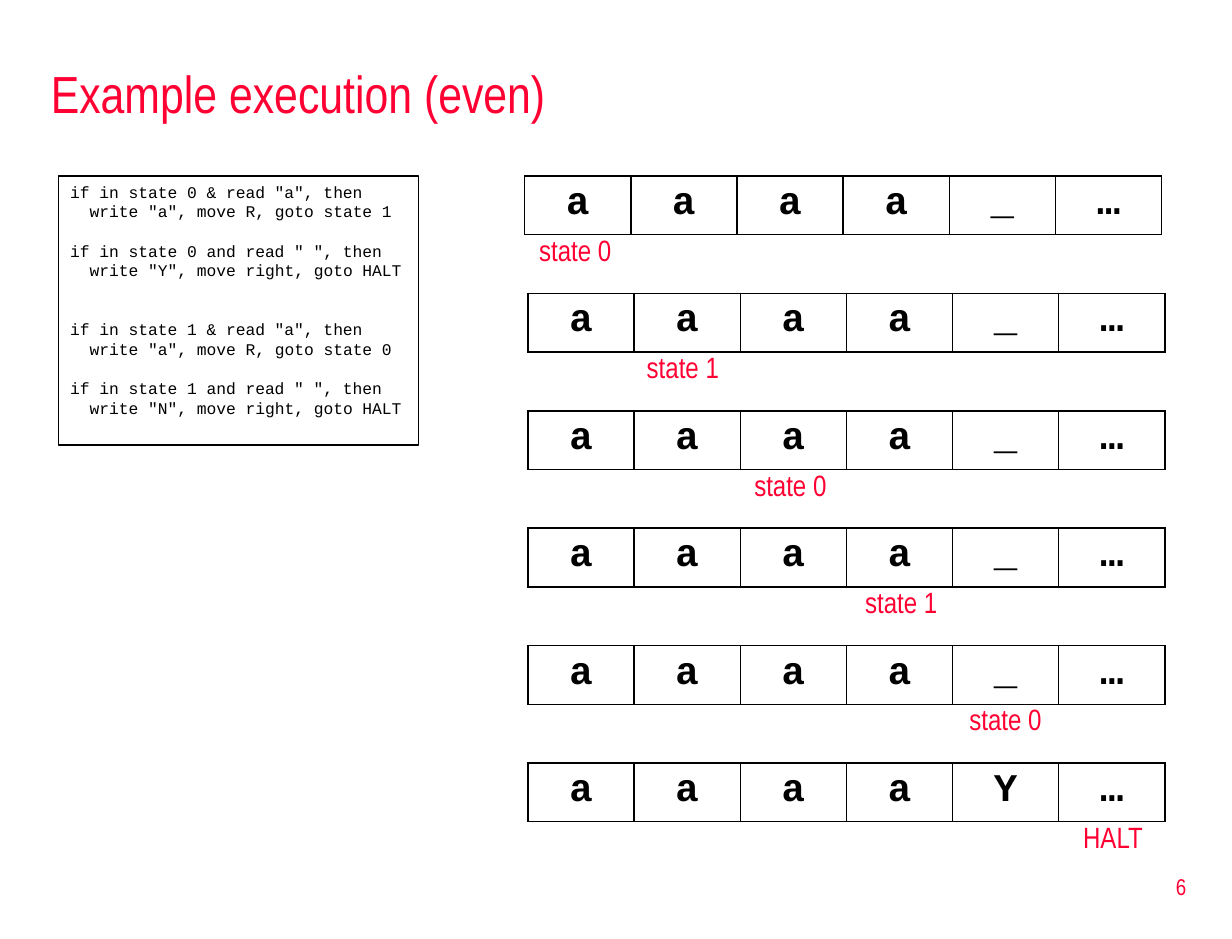
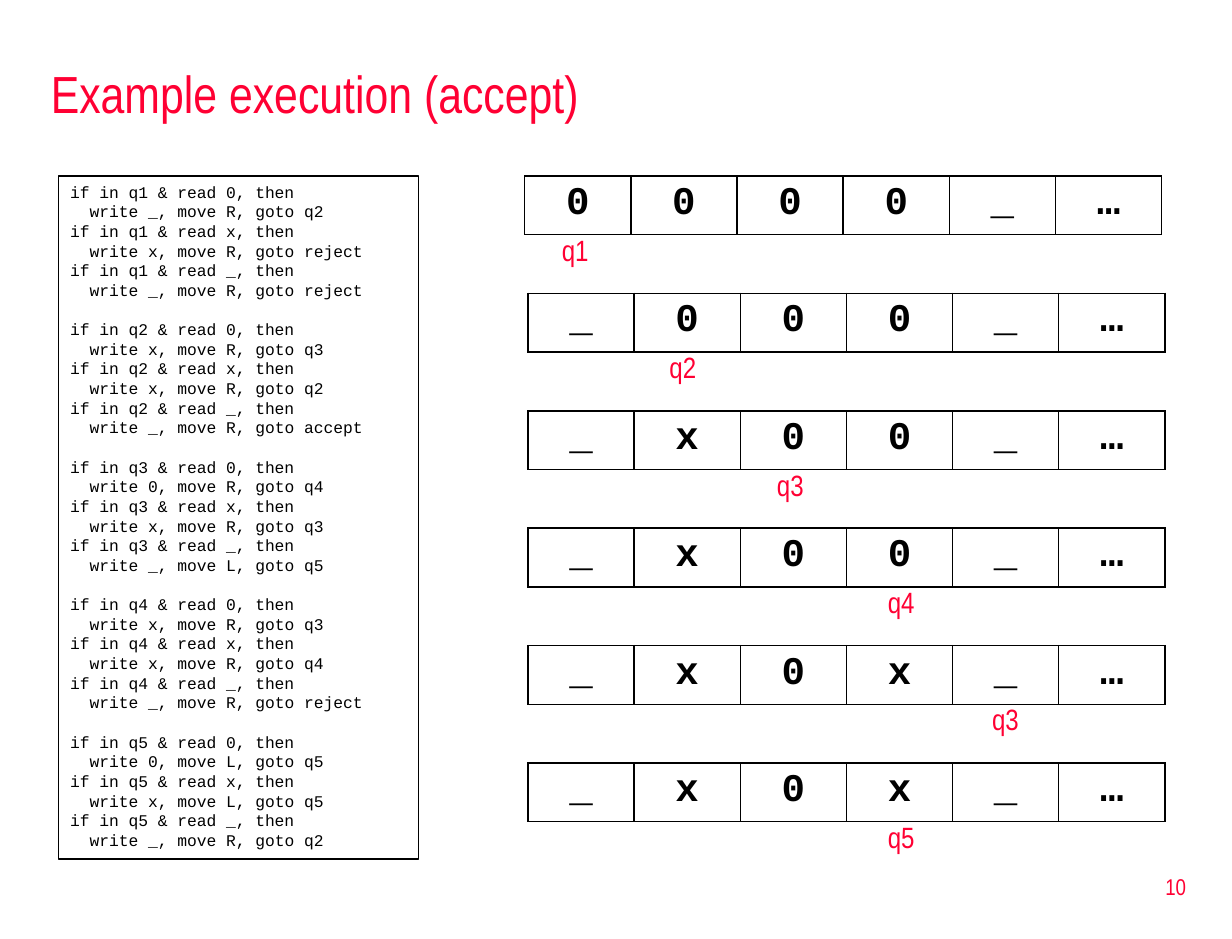
from pptx import Presentation
from pptx.dml.color import RGBColor
from pptx.enum.shapes import MSO_SHAPE
from pptx.enum.text import MSO_ANCHOR, PP_ALIGN
from pptx.oxml.ns import qn
from pptx.util import Pt
from lxml.etree import SubElement

EXECUTIONS = [
    {
        "title": "Example execution (even)",
        "number": "6",
        "program_height": 165,
        "program": [
            (0, ['if in state 0 & read "a", then', 'write "a", move R, goto state 1']),
            (1, ['if in state 0 and read " ", then', 'write "Y", move right, goto HALT']),
            (2, ['if in state 1 & read "a", then', 'write "a", move R, goto state 0']),
            (1, ['if in state 1 and read " ", then', 'write "N", move right, goto HALT']),
        ],
        "steps": [
            ("aaaa_…", 0, "state 0"),
            ("aaaa_…", 1, "state 1"),
            ("aaaa_…", 2, "state 0"),
            ("aaaa_…", 3, "state 1"),
            ("aaaa_…", 4, "state 0"),
            ("aaaaY…", 5, "HALT"),
        ],
    },
    {
        "title": "Example execution (accept)",
        "number": "10",
        "program_height": 419,
        "program": [
            (0, ["if in q1 & read 0, then", "write _, move R, goto q2",
                 "if in q1 & read x, then", "write x, move R, goto reject",
                 "if in q1 & read _, then", "write _, move R, goto reject"]),
            (1, ["if in q2 & read 0, then", "write x, move R, goto q3",
                 "if in q2 & read x, then", "write x, move R, goto q2",
                 "if in q2 & read _, then", "write _, move R, goto accept"]),
            (1, ["if in q3 & read 0, then", "write 0, move R, goto q4",
                 "if in q3 & read x, then", "write x, move R, goto q3",
                 "if in q3 & read _, then", "write _, move L, goto q5"]),
            (1, ["if in q4 & read 0, then", "write x, move R, goto q3",
                 "if in q4 & read x, then", "write x, move R, goto q4",
                 "if in q4 & read _, then", "write _, move R, goto reject"]),
            (1, ["if in q5 & read 0, then", "write 0, move L, goto q5",
                 "if in q5 & read x, then", "write x, move L, goto q5",
                 "if in q5 & read _, then", "write _, move R, goto q2"]),
        ],
        "steps": [
            ("0000_…", 0, "q1"),
            ("_000_…", 1, "q2"),
            ("_x00_…", 2, "q3"),
            ("_x00_…", 3, "q4"),
            ("_x0x_…", 4, "q3"),
            ("_x0x_…", 3, "q5"),
        ],
    },
]

RED, BLACK = "FF0033", "000000"
SANS, MONO = "Arial Narrow", "Courier New"
LINE_PITCH = 12.05
ACTION_INDENT = 12
FIRST_TAPE_LEFT, TAPE_LEFT, TAPE_TOP = 322, 324, 108
STEP_PITCH = 72
CELL_WIDTH, CELL_HEIGHT = 65.16, 30.24
HEAD_LEFTS = (322, 388, 454, 522, 586, 652)
HEAD_TOP = 138.75


def colour(code):
    return RGBColor.from_string(code)


def write(paragraph, text, font, size, code, align=PP_ALIGN.LEFT, bold=False):
    paragraph.alignment = align
    run = paragraph.add_run()
    run.text = text
    run.font.name = font
    run.font.size = Pt(size)
    run.font.bold = bold
    run.font.color.rgb = colour(code)


def add_label(slide, box, text, size, align, anchor=MSO_ANCHOR.TOP):
    frame = slide.shapes.add_textbox(*map(Pt, box)).text_frame
    frame.word_wrap = True
    frame.vertical_anchor = anchor
    write(frame.paragraphs[0], text, SANS, size, RED, align)


def add_title(slide, text):
    title = slide.shapes.title
    title.left, title.top, title.width, title.height = map(Pt, (24, 30, 714, 54))
    title.text_frame.vertical_anchor = MSO_ANCHOR.MIDDLE
    write(title.text_frame.paragraphs[0], text, SANS, 32, RED)


def add_program(slide, groups, height):
    program = slide.shapes.add_shape(MSO_SHAPE.RECTANGLE, *map(Pt, (36, 108, 221, height)))
    program.shadow.inherit = False
    program.fill.background()
    program.line.color.rgb = colour(BLACK)
    program.line.width = Pt(0.75)
    frame = program.text_frame
    frame.word_wrap = True
    frame.vertical_anchor = MSO_ANCHOR.TOP
    lines = [(gap if i == 0 else 0, line)
             for gap, group in groups for i, line in enumerate(group)]
    for i, (gap, line) in enumerate(lines):
        paragraph = frame.add_paragraph() if i else frame.paragraphs[0]
        paragraph.line_spacing = Pt(LINE_PITCH)
        paragraph.space_before = Pt(gap * LINE_PITCH)
        if line.startswith("write"):
            properties = paragraph._p.get_or_add_pPr()
            properties.set("marL", str(Pt(ACTION_INDENT)))
            properties.set("indent", "0")
        write(paragraph, line, MONO, 10, BLACK)


def add_borders(cell):
    properties = cell._tc.get_or_add_tcPr()
    for i, side in enumerate(("a:lnL", "a:lnR", "a:lnT", "a:lnB")):
        border = properties.makeelement(qn(side), {"w": str(Pt(1))})
        properties.insert(i, border)
        fill = SubElement(border, qn("a:solidFill"))
        SubElement(fill, qn("a:srgbClr"), val=BLACK)


def add_tape(slide, symbols, left, top):
    width = CELL_WIDTH * len(symbols)
    tape = slide.shapes.add_table(
        1, len(symbols), *map(Pt, (left, top, width, CELL_HEIGHT))).table
    tape.first_row = tape.horz_banding = False
    for i, symbol in enumerate(symbols):
        tape.columns[i].width = Pt(CELL_WIDTH)
        cell = tape.cell(0, i)
        cell.fill.background()
        add_borders(cell)
        write(cell.text_frame.paragraphs[0], symbol, MONO, 24, BLACK, PP_ALIGN.CENTER, True)


def add_execution(deck, execution):
    slide = deck.slides.add_slide(deck.slide_layouts[5])
    add_title(slide, execution["title"])
    add_label(slide, (577.5, 525, 157.5, 38), execution["number"], 14,
              PP_ALIGN.RIGHT, MSO_ANCHOR.MIDDLE)
    add_program(slide, execution["program"], execution["program_height"])
    for i, (symbols, head, state) in enumerate(execution["steps"]):
        drop = i * STEP_PITCH
        add_tape(slide, symbols, TAPE_LEFT if i else FIRST_TAPE_LEFT, TAPE_TOP + drop)
        add_label(slide, (HEAD_LEFTS[head], HEAD_TOP + drop, 62, 29), state, 18,
                  PP_ALIGN.CENTER)


def main():
    deck = Presentation()
    deck.slide_width, deck.slide_height = Pt(756), Pt(576)
    for execution in EXECUTIONS:
        add_execution(deck, execution)
    deck.save("out.pptx")


if __name__ == "__main__":
    main()
